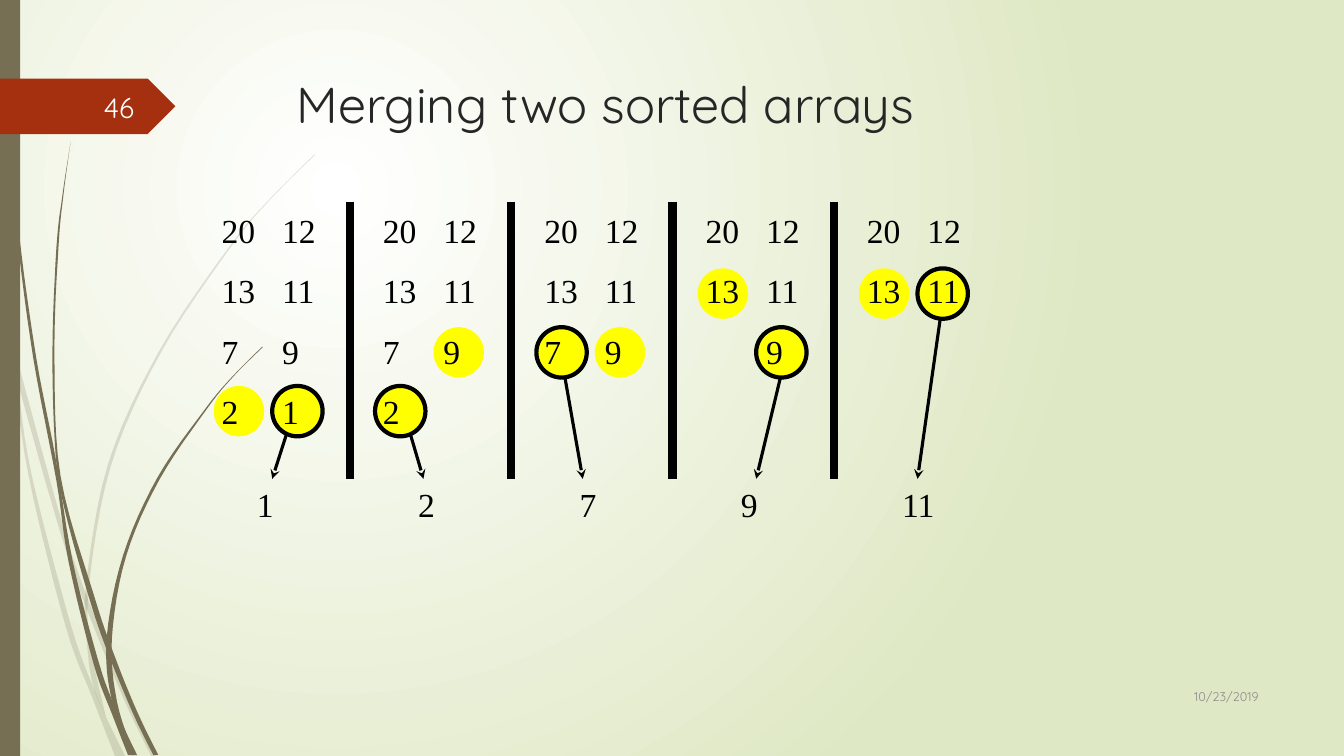
"""Build the slide that shows five steps of merging two sorted arrays."""
from dataclasses import dataclass

from lxml.etree import SubElement
from pptx import Presentation
from pptx.dml.color import RGBColor
from pptx.enum.shapes import MSO_CONNECTOR, MSO_SHAPE
from pptx.enum.text import MSO_ANCHOR, MSO_AUTO_SIZE, PP_ALIGN
from pptx.oxml.ns import qn
from pptx.shapes.autoshape import Shape
from pptx.shapes.connector import Connector
from pptx.slide import Slide
from pptx.text.text import TextFrame
from pptx.util import Inches, Pt

Point = tuple[float, float]
OLIVE, RED, YELLOW, BLACK = "766F54", "A53010", "FFFF00", "000000"
HEADING_FONT, NUMBER_FONT = "Quicksand", "Times New Roman"
STEP_WIDTH = 1.6
COLUMN_LEFTS = (2.1, 2.7)
CIRCLE_LEFTS = (2.12, 2.7)
CIRCLE_TOP, CIRCLE_GAP, CIRCLE_SIZE = 2.08, 0.583, 0.5
BAR_TOP, BAR_BOTTOM = 2, 4.75


@dataclass
class MergeStep:
    """The two arrays, the side whose last value is taken, and its arrow."""
    arrays: tuple[list[str], list[str]]
    taken: int
    arrow_start: Point
    arrow_end: float


@dataclass
class Stalk:
    """A grass stalk given by its two edges, each listed from the top down."""
    left_edge: list[Point]
    right_edge: list[Point]
    opacity: int


STEPS = [
    MergeStep((["20", "13", "7", "2"], ["12", "11", "9", "1"]), 1, (2.86, 4.25), 2.7),
    MergeStep((["20", "13", "7", "2"], ["12", "11", "9"]), 0, (4.03, 4.17), 4.2),
    MergeStep((["20", "13", "7"], ["12", "11", "9"]), 0, (5.53, 3.33), 5.78),
    MergeStep((["20", "13"], ["12", "11", "9"]), 1, (7.78, 3.58), 7.5),
    MergeStep((["20", "13"], ["12", "11"]), 1, (9.36, 2.92), 9.1),
]

STALKS = [
    Stalk([(0, 2.99), (0.11, 3.5), (0.28, 4.7), (0.65, 6.21), (0.92, 6.93), (1.14, 7.5)],
          [(0, 2.82), (0.09, 3.22), (0.17, 3.76), (0.31, 4.69), (0.7, 6.19), (0.93, 6.83),
           (1.05, 7.11), (1.24, 7.5)], 20),
    Stalk([(0.14, 3.45), (0.17, 3.76), (0.58, 5.22), (0.84, 5.99), (1.23, 6.94), (1.5, 7.5)],
          [(0.14, 3.45), (0.62, 5.2), (0.92, 6.07), (1.27, 6.92), (1.55, 7.5)], 20),
    Stalk([(3.12, 1.53), (2.68, 1.97), (2.28, 2.44), (1.58, 3.48), (1.07, 4.61), (0.85, 5.84),
           (0.87, 6.46), (0.93, 6.83), (1.05, 7.11)],
          [(3.12, 1.54), (2.68, 1.98), (2.29, 2.45), (1.6, 3.49), (1.1, 4.62), (0.88, 5.84),
           (0.91, 6.46), (1.05, 7.11)], 20),
    Stalk([(0.03, 0), (0.07, 1.1), (0.17, 2.33), (0.33, 3.55), (0.56, 4.77), (0.68, 5.57),
           (0.93, 6.59), (1.11, 7.08), (1.27, 7.49)],
          [(0.04, 0), (0.08, 1.09), (0.19, 2.32), (0.36, 3.55), (0.55, 4.53), (0.72, 5.56),
           (0.98, 6.57), (1.16, 7.06), (1.36, 7.49)], 100),
    Stalk([(0.7, 1.41), (0.62, 1.93), (0.56, 2.45), (0.52, 3.49), (0.55, 4.49), (0.64, 5.05),
           (0.88, 5.92), (1.06, 6.45), (1.32, 7.08), (1.52, 7.49)],
          [(0.7, 1.41), (0.63, 1.93), (0.58, 2.45), (0.54, 3.49), (0.6, 4.72), (0.93, 5.9),
           (1.13, 6.49), (1.36, 7.06), (1.57, 7.49)], 100),
    Stalk([(2.6, 3.44), (2.31, 3.73), (2.04, 4.05), (1.56, 4.74), (1.22, 5.51), (1.06, 6.31),
           (1.1, 6.91), (1.3, 7.49)],
          [(2.61, 3.44), (2.31, 3.74), (2.05, 4.06), (1.58, 4.76), (1.25, 5.52), (1.11, 6.33),
           (1.16, 6.96), (1.33, 7.49)], 100),
]


def color(value: str) -> RGBColor:
    """Turn a hex string into a colour."""
    return RGBColor.from_string(value)


def smooth(points: list[Point], pieces: int = 6) -> list[Point]:
    """Return points along a Catmull-Rom curve through the given points."""
    padded = [points[0], *points, points[-1]]
    curve = []
    for a, b, c, d in zip(padded, padded[1:], padded[2:], padded[3:]):
        for piece in range(pieces):
            t = piece / pieces
            curve.append(tuple(
                b[i] + t * (c[i] - a[i]) / 2
                + t ** 2 * (2 * a[i] - 5 * b[i] + 4 * c[i] - d[i]) / 2
                + t ** 3 * (3 * b[i] - a[i] - 3 * c[i] + d[i]) / 2
                for i in (0, 1)))
    return curve + [points[-1]]


def paint(shape: Shape, fill: str) -> None:
    """Give a shape a plain fill with no line and no shadow."""
    shape.shadow.inherit = False
    shape.fill.solid()
    shape.fill.fore_color.rgb = color(fill)
    shape.line.fill.background()


def paint_background(slide: Slide) -> None:
    """Fill the background with a circular gradient around the upper left."""
    fill = slide.background.fill
    fill.gradient()
    for stop, position, value in zip(fill.gradient_stops, (0, 1), ("FFFFFF", "DFE8C4")):
        stop.position = position
        stop.color.rgb = color(value)
    gradient = slide.element.find(".//" + qn("a:gradFill"))
    gradient.remove(gradient.find(qn("a:lin")))
    circle = SubElement(gradient, qn("a:path"), path="circle")
    SubElement(circle, qn("a:fillToRect"), l="50000", t="50000", r="100000", b="100000")


def add_stalk(slide: Slide, stalk: Stalk) -> None:
    """Draw one grass stalk."""
    outline = [(x * 1000, y * 1000)
               for x, y in smooth(stalk.left_edge) + smooth(stalk.right_edge)[::-1]]
    builder = slide.shapes.build_freeform(*outline[0], scale=Inches(1) / 1000)
    builder.add_line_segments(outline[1:], close=True)
    shape = builder.convert_to_shape()
    paint(shape, OLIVE)
    if stalk.opacity < 100:
        fill_color = shape.element.spPr.find(qn("a:solidFill"))[0]
        SubElement(fill_color, qn("a:alpha"), val=str(stalk.opacity * 1000))


def add_shape(slide: Slide, kind: MSO_SHAPE, left: float, top: float,
              width: float, height: float, fill: str) -> Shape:
    """Add a filled preset shape."""
    shape = slide.shapes.add_shape(
        kind, Inches(left), Inches(top), Inches(width), Inches(height))
    paint(shape, fill)
    return shape


def add_line(slide: Slide, start: Point, end: Point, width: float) -> Connector:
    """Add a straight black line."""
    line = slide.shapes.add_connector(
        MSO_CONNECTOR.STRAIGHT, *(Inches(value) for value in (*start, *end)))
    line.line.color.rgb = color(BLACK)
    line.line.width = Pt(width)
    SubElement(line.element.spPr, qn("a:effectLst"))
    return line


def write(frame: TextFrame, lines: list[str], font: str, size: float, value: str,
          align: PP_ALIGN = PP_ALIGN.LEFT, spacing: float = 1.0) -> None:
    """Write lines as paragraphs of one format."""
    frame.text = "\n".join(lines)
    for paragraph in frame.paragraphs:
        paragraph.alignment = align
        paragraph.line_spacing = spacing
        paragraph.font.name = font
        paragraph.font.size = Pt(size)
        paragraph.font.color.rgb = color(value)


def add_numbers(slide: Slide, left: float, top: float, width: float, height: float,
                numbers: list[str], spacing: float = 1.0) -> None:
    """Add a text box that holds a column of numbers."""
    box = slide.shapes.add_textbox(Inches(left), Inches(top), Inches(width), Inches(height))
    write(box.text_frame, numbers, NUMBER_FONT, 24, BLACK, spacing=spacing)
    box.text_frame.word_wrap = False
    box.text_frame.auto_size = MSO_AUTO_SIZE.SHAPE_TO_FIT_TEXT


def add_footer(slide: Slide, left: float, top: float, width: float, height: float,
               text: str, size: float, value: str) -> None:
    """Add a right-aligned line for the date or the page number."""
    box = slide.shapes.add_textbox(Inches(left), Inches(top), Inches(width), Inches(height))
    box.text_frame.word_wrap = True
    box.text_frame.vertical_anchor = MSO_ANCHOR.MIDDLE
    write(box.text_frame, [text], HEADING_FONT, size, value, PP_ALIGN.RIGHT)


def add_step(slide: Slide, step: MergeStep, shift: float) -> None:
    """Draw the arrays of one step, the compared values and the value taken."""
    arrow = add_line(slide, step.arrow_start, (step.arrow_end, BAR_BOTTOM), 2.25)
    SubElement(arrow.line._get_or_add_ln(), qn("a:tailEnd"), type="stealth")
    for side, numbers in enumerate(step.arrays):
        top = CIRCLE_TOP + CIRCLE_GAP * (len(numbers) - 1)
        circle = add_shape(slide, MSO_SHAPE.OVAL, CIRCLE_LEFTS[side] + shift, top,
                           CIRCLE_SIZE, CIRCLE_SIZE, YELLOW)
        if side == step.taken:
            circle.line.color.rgb = color(BLACK)
            circle.line.width = Pt(3)
        add_numbers(slide, COLUMN_LEFTS[side] + shift, 1.83, 0.54,
                    0.6 * len(numbers) + 0.11, numbers, 1.5)
    result = step.arrays[step.taken][-1]
    add_numbers(slide, 2.45 + shift, BAR_BOTTOM, 0.21 + 0.16 * len(result), 0.5, [result])


def main() -> None:
    """Build and save the slide."""
    presentation = Presentation()
    presentation.slide_width, presentation.slide_height = Inches(13.33), Inches(7.5)
    slide = presentation.slides.add_slide(presentation.slide_layouts[5])
    paint_background(slide)
    for stalk in STALKS:
        add_stalk(slide, stalk)
    add_shape(slide, MSO_SHAPE.RECTANGLE, 0, 0, 0.2, 7.5, OLIVE)
    add_shape(slide, MSO_SHAPE.PENTAGON, 0, 0.78, 1.74, 0.55, RED)
    add_footer(slide, 11.33, 6.7, 1.25, 0.41, "10/23/2019", 9, "8C8C8C")
    add_footer(slide, 0.58, 0.86, 0.85, 0.4, "46", 20, "FEFFFF")
    title = slide.shapes.title
    title.left, title.top, title.width, title.height = map(Inches, (2.84, 0.68, 9.75, 1.4))
    write(title.text_frame, ["Merging two sorted arrays"], HEADING_FONT, 36, "262626")
    title.text_frame.vertical_anchor = MSO_ANCHOR.TOP
    title.text_frame.auto_size = MSO_AUTO_SIZE.NONE
    for index, step in enumerate(STEPS):
        add_step(slide, step, STEP_WIDTH * index)
    for index in range(len(STEPS) - 1):
        x = 3.47 + STEP_WIDTH * index
        add_line(slide, (x, BAR_TOP), (x, BAR_BOTTOM), 6)
    presentation.save("out.pptx")


if __name__ == "__main__":
    main()
